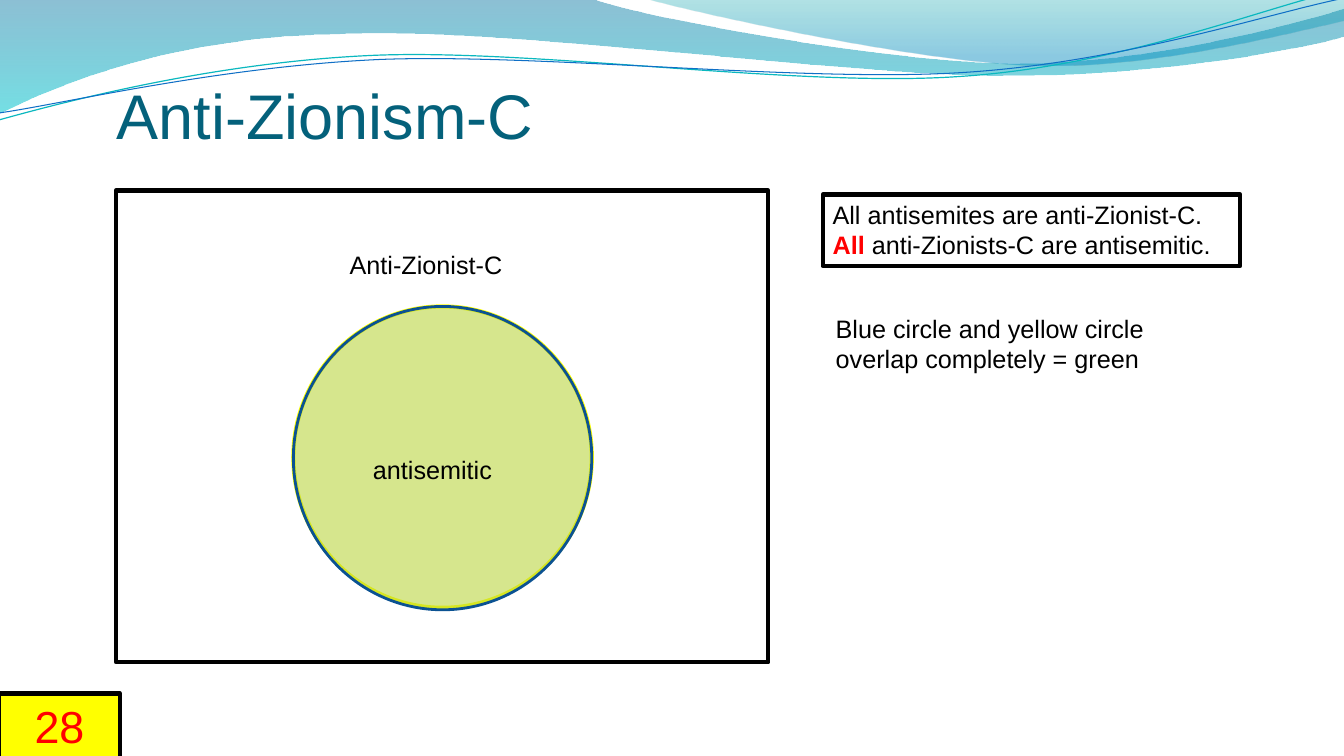
import math

from lxml import etree
from pptx import Presentation
from pptx import util as u
from pptx.dml.color import RGBColor
from pptx.enum import shapes, text
from pptx.oxml import ns

PX = u.Inches(1) / 100
BLACK = RGBColor(0x00, 0x00, 0x00)
RED = RGBColor(0xFF, 0x00, 0x00)
YELLOW = RGBColor(0xFF, 0xFF, 0x00)
TITLE_TEAL = RGBColor(0x04, 0x61, 0x7B)
BLUE = RGBColor(0x0F, 0x6F, 0xC6)
DARK_BLUE = RGBColor(0x0B, 0x52, 0x92)
AQUA = RGBColor(0x0A, 0xB8, 0xBF)
WAVE_BLUE = RGBColor(0x00, 0x74, 0xA1)
WAVE_CYAN = RGBColor(0x00, 0xC6, 0xCF)
CREST_TEAL = RGBColor(0x00, 0xA1, 0xA9)
CREST_BLUE = RGBColor(0x00, 0x8B, 0xBF)

FULL_WAVE = [
    [(0, 0)], [(587, -1)],
    [(634, 17), (885, 63), (1011, 63)], [(1138, 63), (1278, 26), (1333, 9)],
    [(1335, 36)],
    [(1311, 44), (1160, 76), (994, 75)], [(829, 75), (509, 28), (343, 34)],
    [(172, 36), (61, 83), (-1, 113)],
]
RIGHT_CREST = [
    [(639, -1)],
    [(679, 11), (909, 62), (1025, 65)], [(1141, 69), (1282, 32), (1333, 21)],
    [(1333, 0)],
]
AQUA_LINE = [
    [(-1, 119)], [(64, 101), (211, 62), (369, 55)],
    [(527, 48), (790, 87), (950, 76)], [(1110, 66), (1252, 8), (1331, -10)],
]
BLUE_LINE = [
    [(0, 112)], [(63, 103), (218, 66), (378, 59)],
    [(537, 53), (796, 82), (955, 72)], [(1115, 62), (1255, 14), (1334, -2)],
]


def px(length):
    """Turn px into EMU."""
    return u.Emu(round(length * PX))


def set_alpha(color_parent, percent):
    """Make the RGB colour under an XML element partly opaque."""
    color = color_parent.find(".//" + ns.qn("a:srgbClr"))
    etree.SubElement(color, ns.qn("a:alpha"), val=str(percent * 1000))


def style(shape, fill=None, opacity=100, line=None, width=3):
    """Set the fill and outline of a shape."""
    if fill is None:
        shape.fill.background()
    else:
        shape.fill.solid()
        shape.fill.fore_color.rgb = fill
        if opacity < 100:
            set_alpha(shape.fill._xPr.find(ns.qn("a:solidFill")), opacity)
    if line is None:
        shape.line.fill.background()
    else:
        shape.line.color.rgb = line
        shape.line.width = u.Pt(width)


def write(frame, paragraphs, size=18, color=BLACK, align=text.PP_ALIGN.LEFT):
    """Write paragraphs of (words, emphasised) spans into a text frame."""
    for index, spans in enumerate(paragraphs):
        para = frame.add_paragraph() if index else frame.paragraphs[0]
        para.alignment = align
        for words, emphasised in spans:
            span = para.add_run()
            span.text = words
            span.font.name = "Arial"
            span.font.size = u.Pt(size)
            span.font.bold = emphasised
            span.font.color.rgb = RED if emphasised else color


def add_text(page, box, paragraphs, fill=None, line=None, **form):
    """Add a wrapped text box, framed and filled on request."""
    label = page.shapes.add_textbox(*map(px, box))
    style(label, fill, line=line)
    label.text_frame.word_wrap = True
    label.text_frame.auto_size = text.MSO_AUTO_SIZE.SHAPE_TO_FIT_TEXT
    write(label.text_frame, paragraphs, **form)


def add_preset(page, kind, box, **look):
    """Add a preset shape without shadow."""
    shape = page.shapes.add_shape(kind, *map(px, box))
    shape.shadow.inherit = False
    style(shape, **look)


def turn(point, pivot, degrees):
    """Turn a point clockwise about a pivot."""
    across, down = point[0] - pivot[0], point[1] - pivot[1]
    cos, sin = math.cos(math.radians(degrees)), math.sin(math.radians(degrees))
    return pivot[0] + across * cos - down * sin, pivot[1] + across * sin + down * cos


def add_outline(page, pieces, close, pivot=(0, 0), tilt=0, **look):
    """Add a freeform whose one-point pieces are lines and three-point pieces curves."""
    detail = 100
    points = [[detail * value for value in turn(point, pivot, tilt)]
              for piece in pieces for point in piece]
    builder = page.shapes.build_freeform(*points[0], scale=PX / detail)
    builder.add_line_segments(points[1:], close=close)
    shape = builder.convert_to_shape()
    segments = iter(shape._element.findall(".//" + ns.qn("a:lnTo")))
    for piece in pieces[1:]:
        first, *others = [next(segments) for _ in piece]
        if others:
            first.tag = ns.qn("a:cubicBezTo")
            for other in others:
                first.append(other[0])
                other.getparent().remove(other)
    shape.rotation = -tilt % 360
    shape.shadow.inherit = False
    style(shape, **look)
    return shape


def add_wave(page, pieces, stops):
    """Add a wave with a downward see-through gradient."""
    wave = add_outline(page, pieces, True)
    wave.fill.gradient()
    wave.fill.gradient_angle = 270
    for stop, (position, color, opacity) in zip(wave.fill.gradient_stops, stops):
        stop.position = position
        stop.color.rgb = color
        set_alpha(stop._gs, opacity)


def add_header(page):
    """Draw the waves across the top."""
    add_wave(page, FULL_WAVE, [(0, WAVE_BLUE, 45), (1, WAVE_CYAN, 55)])
    add_wave(page, RIGHT_CREST, [(0, CREST_TEAL, 30), (0.8, CREST_BLUE, 45)])
    add_outline(page, AQUA_LINE, False, (665, 57.5), 2.7, line=AQUA, width=0.85)
    add_outline(page, BLUE_LINE, False, (667, 59), 2.7, line=BLUE, width=0.75)


def add_title(page, box, words):
    """Place and format the title in front of the waves."""
    title = page.shapes.title
    title.left, title.top, title.width, title.height = map(px, box)
    frame = title.text_frame
    frame.auto_size = text.MSO_AUTO_SIZE.NONE
    frame.vertical_anchor = text.MSO_ANCHOR.BOTTOM
    frame.margin_left = frame.margin_right = frame.margin_bottom = 0
    frame.margin_top = px(5)
    write(frame, [[(words, False)]], size=45, color=TITLE_TEAL)
    page.shapes._spTree.append(title._element)


def add_diagram(page, box):
    """Draw the framed pair of coinciding circles with labels."""
    left, top, width, height = box
    circle = shapes.MSO_SHAPE.FLOWCHART_CONNECTOR
    add_preset(page, shapes.MSO_SHAPE.RECTANGLE, box, line=BLACK)
    add_preset(page, circle, (left + 176, top + 115, 296, 299),
               fill=YELLOW, opacity=49, line=YELLOW)
    add_preset(page, circle, (left + 176, top + 115, 296, 301),
               fill=BLUE, opacity=17, line=DARK_BLUE, width=2)
    add_text(page, (left + 245, top + 257, 159, 40), [[("antisemitic", False)]])
    add_text(page, (left + 222, top + 53, 216, 40), [[("Anti-Zionist-C", False)]])


def add_notes(page, box):
    """Write the framed statements and the reading of the colours."""
    left, top, width, height = box
    add_text(page, box, [
        [("All antisemites are anti-Zionist-C.", False)],
        [("All ", True), ("anti-Zionists-C are antisemitic.", False)],
    ], line=BLACK)
    add_text(page, (left + 3, top + 113, 354, height),
             [[("Blue circle and yellow circle overlap completely = green", False)]])


def main():
    """Build and save the deck."""
    deck = Presentation()
    deck.slide_width, deck.slide_height = px(1333), px(750)
    page = deck.slides.add_slide(deck.slide_layouts[5])
    add_header(page)
    add_title(page, (116, 64, 938, 87), "Anti-Zionism-C")
    add_diagram(page, (115, 189, 647, 468))
    add_notes(page, (816, 193, 414, 71))
    add_text(page, (-1, 688, 120, 64), [[("28", False)]], fill=YELLOW, line=BLACK,
             size=32, color=RED, align=text.PP_ALIGN.CENTER)
    deck.save("out.pptx")


if __name__ == "__main__":
    main()
